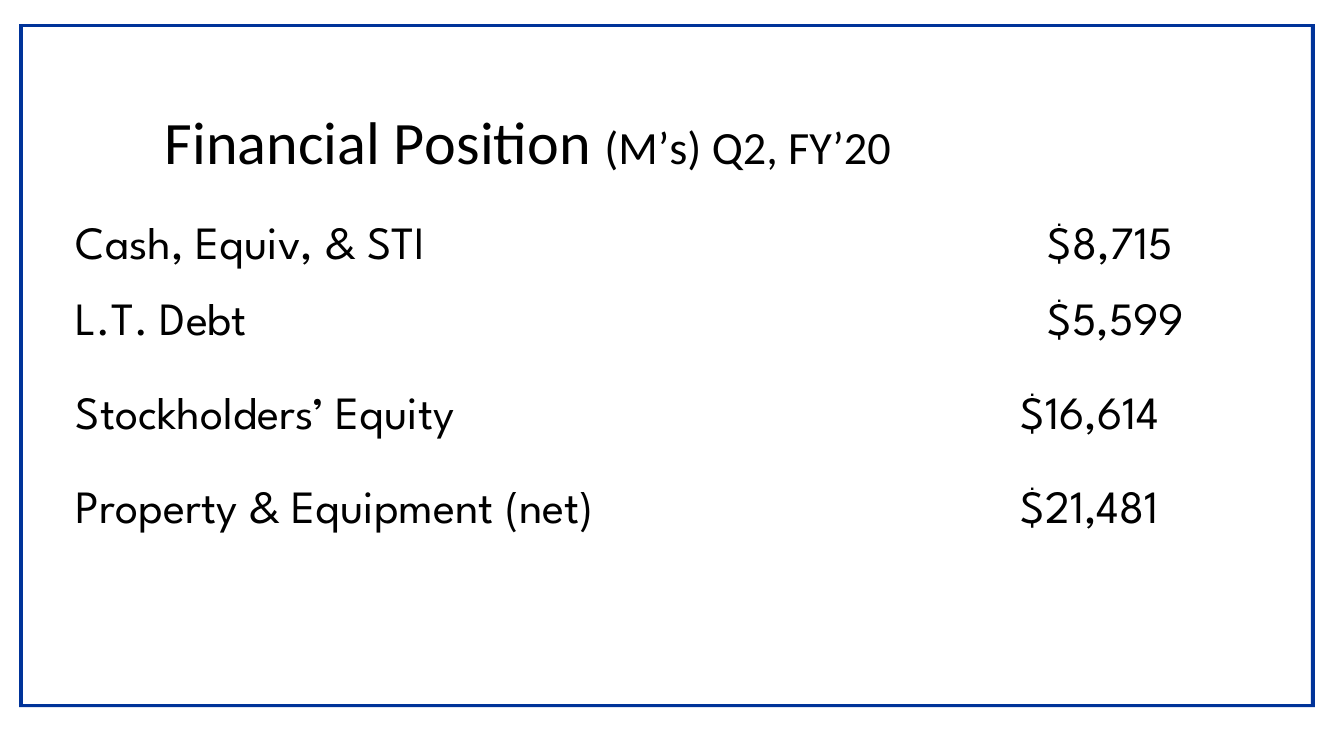
import pptx
import pptx.dml.color
import pptx.enum.text
import pptx.util

PX = 9144000 / 1008  # EMU in one px
THEME = {
    "frame": pptx.dml.color.RGBColor(0x00, 0x33, 0x99),
    "text": pptx.dml.color.RGBColor(0, 0, 0),
    "title_font": "Calibri",
    "body_font": "League Spartan",
    "title_size": pptx.util.Pt(43),
    "body_size": pptx.util.Pt(33),
}


def px(n):
    return pptx.util.Emu(round(n * PX))


def add_runs(p, parts, font):
    """Fill p with (text, letter spacing in 1/100 pt) parts and set its font."""
    p.font.name = font
    p.font.size = THEME["body_size"]
    p.font.color.rgb = THEME["text"]
    for text, spacing in parts:
        r = p.add_run()
        r.text = text
        if spacing:
            r._r.get_or_add_rPr().set("spc", str(spacing))


prs = pptx.Presentation()
prs.slide_width, prs.slide_height = px(1344), px(756)
s = prs.slides.add_slide(prs.slide_layouts[6])

# Frame: outer outline with an inner opening
left, top, right, bottom = 19, 24, 1315, 707
side, edge = 4, 3
fb = s.shapes.build_freeform(left, top, scale=PX)
fb.add_line_segments([(right, top), (right, bottom), (left, bottom)])
fb.move_to(left + side, top + edge)
fb.add_line_segments([
    (left + side, bottom - edge),
    (right - side, bottom - edge),
    (right - side, top + edge),
])
frame = fb.convert_to_shape()
frame.shadow.inherit = False
frame.fill.solid()
frame.fill.fore_color.rgb = THEME["frame"]
frame.line.fill.background()

# Title
title = s.shapes.add_textbox(px(93), px(99), px(1159), px(77))
tf = title.text_frame
tf.word_wrap = True
tf.vertical_anchor = pptx.enum.text.MSO_ANCHOR.MIDDLE
tf.margin_left = px(72)
tf.margin_top = tf.margin_right = tf.margin_bottom = 0
p = tf.paragraphs[0]
p.line_spacing = 1.07
heading = [("F", -70), ("inancial ", 0), ("P", -160), ("osition ", 0)]
period = [("(M", 0), ("’", -140), ("s) Q2, FY’20", 0)]
add_runs(p, heading + period, THEME["title_font"])
for r in p.runs[:len(heading)]:
    r.font.size = THEME["title_size"]

# Balance figures: label parts, amount, amount indent, row height
rows = [
    ([("Cash, Equi", 0), ("v", -230), (", & STI", 0)], "$8,715", 76, 76),
    ([("L.", 0), ("T", -470), (". D", 0), ("e", -60), ("bt", 0)],
     "$5,599", 76, 94),
    ([("Sto", 0), ("c", -160), ("kholde", 0), ("r", -110), ("s’ Equity", 0)],
     "$16,614", 49, 94),
    ([("P", 0), ("r", -140), ("ope", 0), ("r", 50), ("ty & Equipment (net)", 0)],
     "$21,481", 49, 76),
]
widths = [900, 310]
table = s.shapes.add_table(
    len(rows), len(widths), px(72), px(227),
    px(sum(widths)), px(sum(row[-1] for row in rows))).table
table.first_row = table.horz_banding = False
for column, width in zip(table.columns, widths):
    column.width = px(width)
for i, (label, amount, indent, height) in enumerate(rows):
    table.rows[i].height = px(height)
    for j, (parts, margin) in enumerate([(label, 4), ([(amount, 0)], indent)]):
        cell = table.cell(i, j)
        cell.fill.background()
        cell.margin_left = px(margin)
        cell.margin_top = cell.margin_right = cell.margin_bottom = 0
        add_runs(cell.text_frame.paragraphs[0], parts, THEME["body_font"])

prs.save("out.pptx")
